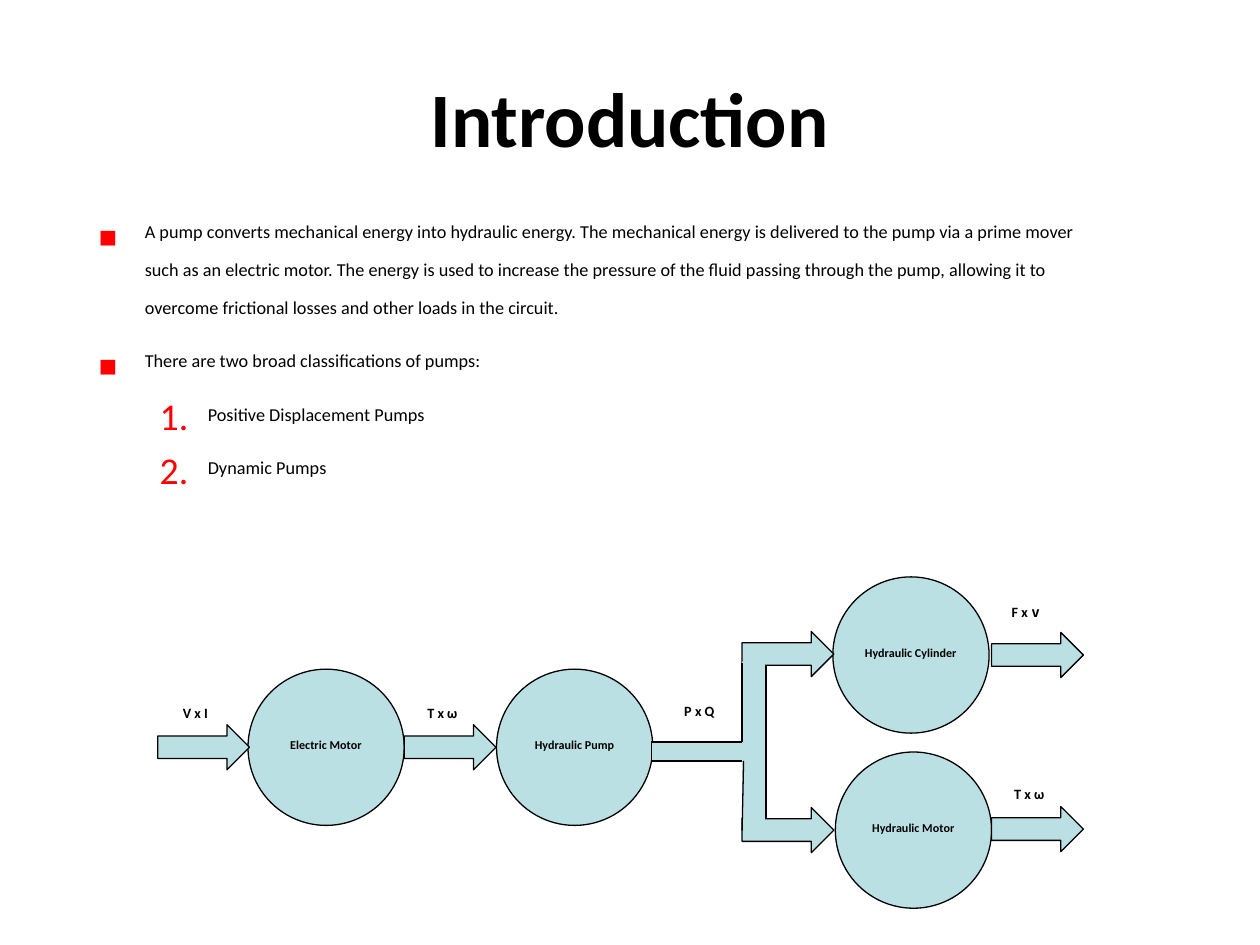
from lxml import etree
from pptx import Presentation
from pptx import util as u
from pptx.dml.color import RGBColor
from pptx.enum import shapes, text
from pptx.oxml.ns import qn

COLORS = {"ink": "000000", "marker": "FF0000", "part": "BBE0E3"}
FONT = "Calibri"
SYMBOL_FONT = "DejaVu Sans Mono"
RAISED = "30000"

CIRCLE = 3.15
ARROW_W, ARROW_H = 1.85, 0.91
LABEL_W, LABEL_H = 2.29, 1.14
LINE_WIDTH = 0.75
BODY_SIZE = 18
INDENT = 0.97

POINTS = [
    ("A pump converts mechanical energy into hydraulic energy. "
     "The mechanical energy is delivered to the pump via a prime mover "
     "such as an electric motor. The energy is used to increase the pressure "
     "of the fluid passing through the pump, allowing it to overcome "
     "frictional losses and other loads in the circuit.", 0),
    ("There are two broad classifications of pumps:", 0),
    ("Positive Displacement Pumps", 1),
    ("Dynamic Pumps", 1),
]
# Machines and arrows: left, top. Labels: centre x, centre y.
MACHINES = [
    ("Hydraulic Cylinder", 16.79, 11.63),
    ("Electric Motor", 5, 13.49),
    ("Hydraulic Pump", 10.01, 13.49),
    ("Hydraulic Motor", 16.84, 15.16),
]
ARROWS = [(3.18, 14.61), (8.15, 14.61), (19.99, 12.75), (19.99, 16.26),
          (14.96, 12.73), (14.96, 16.28)]
LABELS = [
    ([("V x I", FONT)], 3.94, 14.43),
    ([("T x ω", FONT)], 8.92, 14.44),
    ([("P x Q", FONT)], 14.1, 14.39),
    ([("F x ", FONT), ("v", SYMBOL_FONT)], 20.68, 12.4),
    ([("T x ω", FONT)], 20.75, 16.07),
]
PIPE_EDGES = [(15.44, 16.51, 15.44, 13.41), (14.96, 16.74, 14.99, 15.34),
              (14.96, 14.96, 14.96, 13.36)]


def color(name):
    return RGBColor.from_string(COLORS[name])


def cm(*lengths):
    return [u.Cm(length) for length in lengths]


def add_run(paragraph, words, size, bold=False, font=FONT, raised=True):
    run = paragraph.add_run()
    run.text = words
    run.font.name, run.font.size, run.font.bold = font, u.Pt(size), bold
    run.font.color.rgb = color("ink")
    if raised:
        run._r.get_or_add_rPr().set("baseline", RAISED)


def center_text(shape, wrap):
    """Centre the text both ways, without margins, and return its paragraph."""
    frame = shape.text_frame
    frame.margin_left = frame.margin_right = 0
    frame.margin_top = frame.margin_bottom = 0
    frame.vertical_anchor = text.MSO_ANCHOR.MIDDLE
    frame.word_wrap = wrap
    paragraph = frame.paragraphs[0]
    paragraph.alignment = text.PP_ALIGN.CENTER
    return paragraph


def set_marker(paragraph, level):
    """Give a paragraph its indent, spacing and a red square or number."""
    paragraph.level = level
    props = paragraph._p.get_or_add_pPr()
    props.set("marL", str(u.Cm(INDENT + 1.27 * level)))
    props.set("indent", str(-u.Cm(INDENT)))
    before = etree.SubElement(props, qn("a:spcBef"))
    etree.SubElement(before, qn("a:spcPct"), val="50000")
    tint = etree.SubElement(props, qn("a:buClr"))
    etree.SubElement(tint, qn("a:srgbClr"), val=COLORS["marker"])
    etree.SubElement(props, qn("a:buSzPct"), val="120000")
    if level:
        etree.SubElement(props, qn("a:buFont"), typeface=FONT)
        etree.SubElement(props, qn("a:buAutoNum"), type="arabicPeriod")
    else:
        etree.SubElement(props, qn("a:buFont"), typeface=SYMBOL_FONT)
        etree.SubElement(props, qn("a:buChar"), char="▪")


def add_title(slide, words):
    title = slide.shapes.add_textbox(*cm(1.27, 0.76, 22.86, 3.18))
    add_run(center_text(title, True), words, 44, bold=True, raised=False)


def add_points(slide):
    frame = slide.shapes.add_textbox(*cm(1.7, 4.24, 20.52, 7.57)).text_frame
    frame.word_wrap = True
    for index, (words, level) in enumerate(POINTS):
        paragraph = frame.add_paragraph() if index else frame.paragraphs[0]
        set_marker(paragraph, level)
        add_run(paragraph, words, BODY_SIZE)


def add_part(diagram, kind, left, top, width, height, outlined=True):
    part = diagram.shapes.add_shape(kind, *cm(left, top, width, height))
    part.shadow.inherit = False
    part.fill.solid()
    part.fill.fore_color.rgb = color("part")
    if outlined:
        part.line.color.rgb = color("ink")
        part.line.width = u.Pt(LINE_WIDTH)
    else:
        part.line.fill.background()
    return part


def add_machine(diagram, name, left, top):
    machine = add_part(diagram, shapes.MSO_SHAPE.OVAL, left, top, CIRCLE, CIRCLE)
    add_run(center_text(machine, True), name, 12, bold=True)


def add_label(diagram, parts, x, y):
    label = diagram.shapes.add_textbox(
        *cm(x - LABEL_W / 2, y - LABEL_H / 2, LABEL_W, LABEL_H))
    paragraph = center_text(label, False)
    for words, font in parts:
        add_run(paragraph, words, 14, bold=True, font=font)


def add_edge(diagram, *ends):
    edge = diagram.shapes.add_connector(shapes.MSO_CONNECTOR.STRAIGHT, *cm(*ends))
    edge.line.color.rgb = color("ink")
    edge.line.width = u.Pt(LINE_WIDTH)
    etree.SubElement(edge._element.spPr, qn("a:effectLst"))


def add_diagram(slide):
    diagram = slide.shapes.add_group_shape()
    for machine in MACHINES:
        add_machine(diagram, *machine)
    add_part(diagram, shapes.MSO_SHAPE.RECTANGLE, 13.13, 14.96, 2.03, 0.38)
    for left, top in ARROWS:
        add_part(diagram, shapes.MSO_SHAPE.RIGHT_ARROW, left, top, ARROW_W, ARROW_H)
    add_part(diagram, shapes.MSO_SHAPE.RECTANGLE, 14.96, 13.34, 0.46, 3.23,
             outlined=False)
    for edge in PIPE_EDGES:
        add_edge(diagram, *edge)
    for label in LABELS:
        add_label(diagram, *label)


def main():
    deck = Presentation()
    deck.slide_width, deck.slide_height = cm(25.4, 19.05)
    slide = deck.slides.add_slide(deck.slide_layouts[6])
    add_title(slide, "Introduction")
    add_points(slide)
    add_diagram(slide)
    deck.save("out.pptx")


if __name__ == "__main__":
    main()
